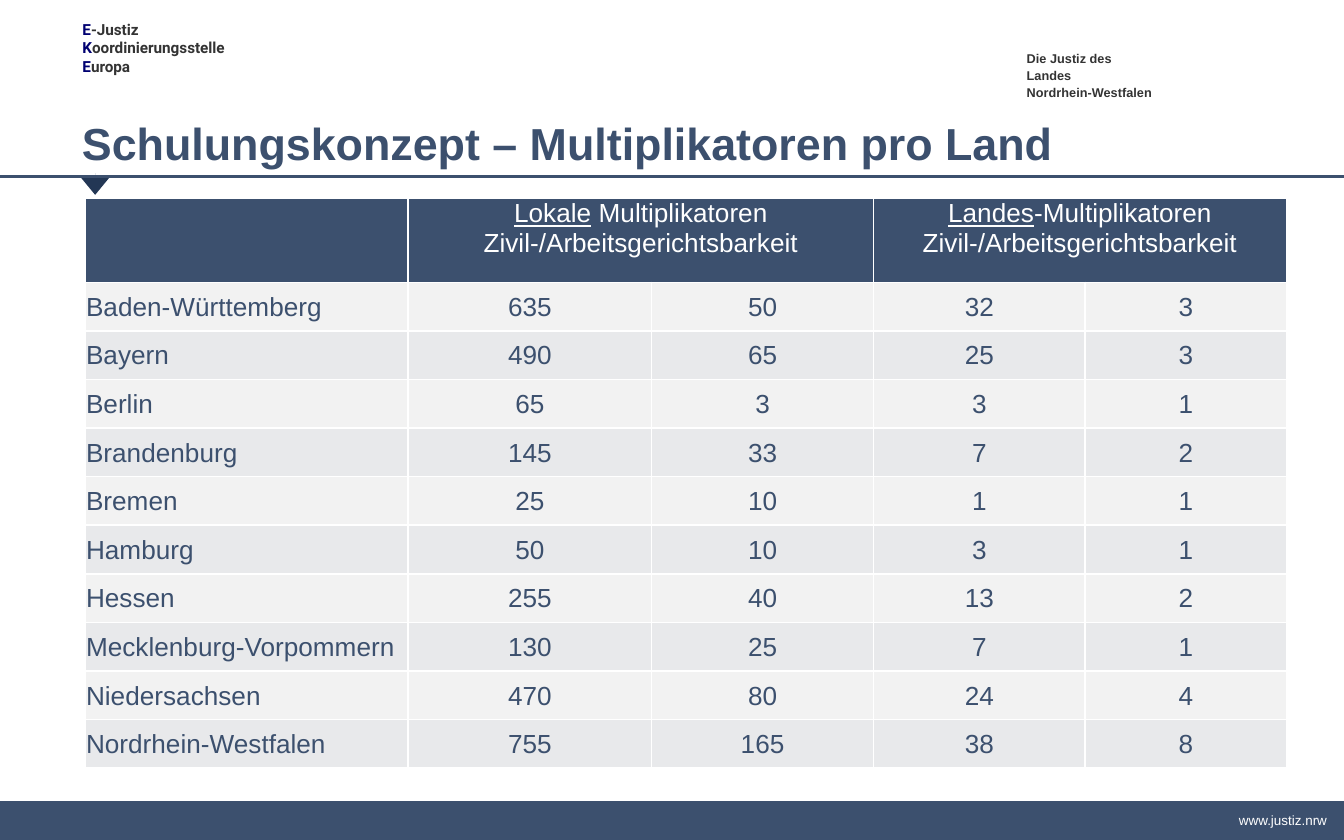
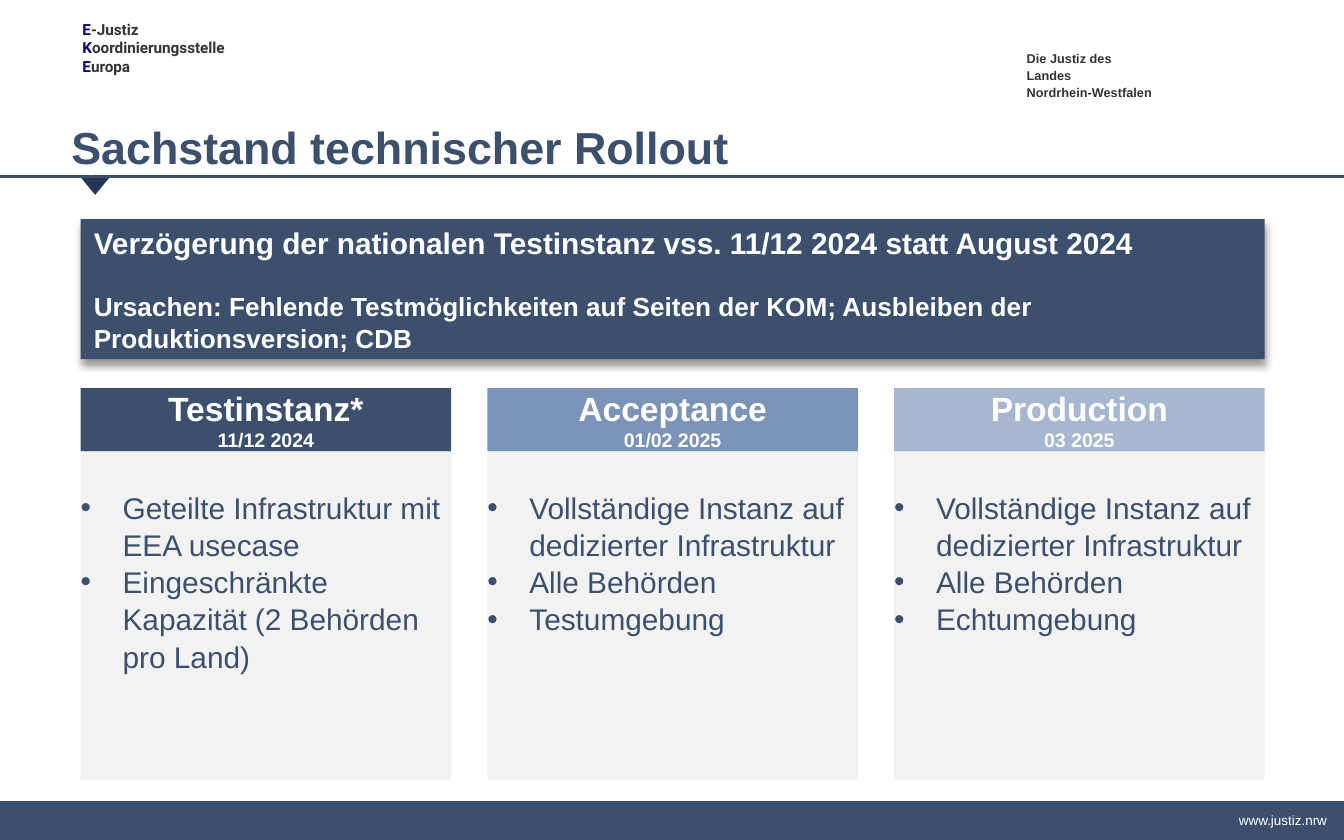
from dataclasses import dataclass
from typing import Any

from lxml import etree
from pptx import Presentation
from pptx import util as u
from pptx.dml.color import RGBColor
from pptx.enum import shapes, text
from pptx.oxml import ns

Pt = u.Pt

NAVY = RGBColor(0x3C, 0x50, 0x6E)
DARK_NAVY = RGBColor(0x23, 0x37, 0x55)
MID_BLUE = RGBColor(0x7B, 0x93, 0xB7)
LIGHT_BLUE = RGBColor(0xA7, 0xB7, 0xCF)
INITIAL_BLUE = RGBColor(0x00, 0x00, 0x71)
CHARCOAL = RGBColor(0x33, 0x33, 0x33)
PALE = RGBColor(0xF2, 0xF2, 0xF2)
PALE_BLUE = RGBColor(0xE8, 0xE9, 0xEB)
WHITE = RGBColor(0xFF, 0xFF, 0xFF)

SLIDE_WIDTH, SLIDE_HEIGHT = 720, 450
LEFT, CENTER, RIGHT = text.PP_ALIGN.LEFT, text.PP_ALIGN.CENTER, text.PP_ALIGN.RIGHT
TOP, MIDDLE, BOTTOM = (text.MSO_ANCHOR.TOP, text.MSO_ANCHOR.MIDDLE,
                       text.MSO_ANCHOR.BOTTOM)
GROW = text.MSO_AUTO_SIZE.SHAPE_TO_FIT_TEXT
RECTANGLE = shapes.MSO_SHAPE.RECTANGLE
NO_MARGINS = {f"margin_{side}": 0 for side in ("left", "top", "right", "bottom")}
CELL_MARGINS = NO_MARGINS | {f"margin_{side}": Pt(0.7)
                             for side in ("left", "top", "right")}


@dataclass(frozen=True)
class Area:
    """A rectangle in points."""
    left: float
    top: float
    width: float
    height: float

    def lengths(self) -> tuple:
        return Pt(self.left), Pt(self.top), Pt(self.width), Pt(self.height)


@dataclass(frozen=True)
class Span:
    words: str
    size: float
    color: RGBColor = WHITE
    bold: bool = False
    underline: bool = False
    font: str = "Arial"


@dataclass(frozen=True)
class Para:
    spans: tuple[Span, ...]
    align: Any = LEFT
    line: Any = None
    before: float = 0
    bullet: bool = False


@dataclass(frozen=True)
class Stage:
    name: str
    date: str
    color: RGBColor
    points: tuple[str, ...]


STATES = (
    ("Baden-Württemberg", 635, 50, 32, 3),
    ("Bayern", 490, 65, 25, 3),
    ("Berlin", 65, 3, 3, 1),
    ("Brandenburg", 145, 33, 7, 2),
    ("Bremen", 25, 10, 1, 1),
    ("Hamburg", 50, 10, 3, 1),
    ("Hessen", 255, 40, 13, 2),
    ("Mecklenburg-Vorpommern", 130, 25, 7, 1),
    ("Niedersachsen", 470, 80, 24, 4),
    ("Nordrhein-Westfalen", 755, 165, 38, 8),
)
COLUMN_WIDTHS = (173.3, 130.4, 118.9, 113.4, 107.8)
HEADER_HEIGHT, ROW_HEIGHT = 45.3, 26.05

STAGES = (
    Stage("Testinstanz*", "11/12 2024", NAVY,
          ("Geteilte Infrastruktur mit EEA usecase",
           "Eingeschränkte Kapazität (2 Behörden pro Land)")),
    Stage("Acceptance", "01/02 2025", MID_BLUE,
          ("Vollständige Instanz auf dedizierter Infrastruktur",
           "Alle Behörden", "Testumgebung")),
    Stage("Production", "03 2025", LIGHT_BLUE,
          ("Vollständige Instanz auf dedizierter Infrastruktur",
           "Alle Behörden", "Echtumgebung")),
)


def apply(target: Any, formats: dict[str, Any]) -> None:
    for name, value in formats.items():
        setattr(target, name, value)


def add_xml(parent: Any, tag: str, **attributes: str) -> Any:
    return etree.SubElement(parent, ns.qn(tag), attributes)


def add_span(para: Any, span: Span) -> None:
    for number, line in enumerate(span.words.split("\n")):
        if number:
            para.add_line_break()
        run = para.add_run()
        run.text = line
        apply(run.font, {"name": span.font, "size": Pt(span.size),
                         "bold": span.bold, "underline": span.underline})
        run.font.color.rgb = span.color


def write(frame: Any, paras: list[Para]) -> None:
    for number, item in enumerate(paras):
        para = frame.add_paragraph() if number else frame.paragraphs[0]
        if item.bullet:
            properties = para._p.get_or_add_pPr()
            apply_indent = {"marL": str(Pt(22.5)), "indent": str(-Pt(22.5))}
            for name, value in apply_indent.items():
                properties.set(name, value)
            add_xml(properties, "a:buFont", typeface="Arial")
            add_xml(properties, "a:buChar", char="•")
        apply(para, {"alignment": item.align, "line_spacing": item.line,
                     "space_before": Pt(item.before)})
        for span in item.spans:
            add_span(para, span)


def add_text(page: Any, area: Area, paras: list[Para], **formats: Any) -> None:
    frame = page.shapes.add_textbox(*area.lengths()).text_frame
    apply(frame, {"word_wrap": True} | formats)
    write(frame, paras)


def add_block(page: Any, area: Area, color: RGBColor, paras: list[Para] = (),
              kind: Any = RECTANGLE, **formats: Any) -> Any:
    """Add a flat filled shape without outline."""
    block = page.shapes.add_shape(kind, *area.lengths())
    block.shadow.inherit = False
    block.fill.solid()
    block.fill.fore_color.rgb = color
    block.line.fill.background()
    apply(block.text_frame, {"word_wrap": True, "vertical_anchor": MIDDLE} | formats)
    write(block.text_frame, paras)
    return block


def add_drop_shadow(block: Any) -> None:
    effects = block._element.spPr.find(ns.qn("a:effectLst"))
    shadow = add_xml(effects, "a:outerShdw", blurRad=str(Pt(4)), dist=str(Pt(3)),
                     dir="5400000", algn="t", rotWithShape="0")
    color = add_xml(shadow, "a:srgbClr", val="000000")
    add_xml(color, "a:alpha", val="40000")


def add_page(deck: Any, title: str, area: Area, line: Any) -> Any:
    """Add a slide with the shared header, title rule, footer and its title."""
    page = deck.slides.add_slide(deck.slide_layouts[6])
    page.background.fill.solid()
    page.background.fill.fore_color.rgb = WHITE

    add_text(page, Area(550, 26.6, 71.3, 18),
             [Para((Span("Die Justiz des Landes\nNordrhein-Westfalen", 6.8,
                         CHARCOAL, bold=True),), line=Pt(9))],
             **NO_MARGINS | {"word_wrap": False, "auto_size": GROW})
    add_block(page, Area(0, 429.1, SLIDE_WIDTH, SLIDE_HEIGHT - 429.1), NAVY)
    add_text(page, Area(644.4, 431.5, 73.6, 15.8),
             [Para((Span("www.justiz.nrw", 7.2),), RIGHT)],
             vertical_anchor=MIDDLE, auto_size=GROW)

    marker = add_block(page, Area(42.5, 92.8, 17, 11.6), DARK_NAVY,
                       kind=shapes.MSO_SHAPE.DOWN_ARROW)
    marker.adjustments[0], marker.adjustments[1] = 0, 0.89
    rule = page.shapes.add_connector(shapes.MSO_CONNECTOR.STRAIGHT, 0, Pt(94.5),
                                     Pt(SLIDE_WIDTH), Pt(94.5))
    rule.line.color.rgb = NAVY
    rule.line.width = Pt(1.5)
    add_xml(rule._element.spPr, "a:effectLst")

    unit = [Para((Span(word[0], 8.2, INITIAL_BLUE, bold=True, font="Roboto"),
                  Span(word[1:], 8.2, CHARCOAL, bold=True, font="Roboto")))
            for word in ("E-Justiz", "Koordinierungsstelle", "Europa")]
    add_text(page, Area(37.1, 7.2, 134.6, 37.2), unit, auto_size=GROW)
    add_text(page, area, [Para((Span(title, 24, NAVY, bold=True),), line=line)],
             vertical_anchor=BOTTOM, **NO_MARGINS)
    return page


def fill_cell(cell: Any, color: RGBColor, paras: list[Para], anchor: Any) -> None:
    properties = cell._tc.get_or_add_tcPr()
    for edge in ("a:lnL", "a:lnR", "a:lnT", "a:lnB"):
        border = add_xml(properties, edge, w=str(Pt(1)))
        add_xml(add_xml(border, "a:solidFill"), "a:srgbClr", val=str(WHITE))
    cell.fill.solid()
    cell.fill.fore_color.rgb = color
    apply(cell, CELL_MARGINS | {"vertical_anchor": anchor})
    write(cell.text_frame, paras)


def add_state_table(page: Any) -> None:
    area = Area(45.4, 106, sum(COLUMN_WIDTHS), HEADER_HEIGHT + ROW_HEIGHT * len(STATES))
    table = page.shapes.add_table(len(STATES) + 1, len(COLUMN_WIDTHS),
                                  *area.lengths()).table
    apply(table, {"first_row": False, "horz_banding": False})
    for column, width in zip(table.columns, COLUMN_WIDTHS):
        column.width = Pt(width)
    for number, row in enumerate(table.rows):
        row.height = Pt(ROW_HEIGHT if number else HEADER_HEIGHT)

    headings = {1: ("Lokale", " Multiplikatoren"), 3: ("Landes", "-Multiplikatoren")}
    for column in range(len(COLUMN_WIDTHS)):
        paras = []
        if column in headings:
            table.cell(0, column).merge(table.cell(0, column + 1))
            marked, rest = headings[column]
            paras = [Para((Span(marked, 14, underline=True), Span(rest, 14)), CENTER),
                     Para((Span("Zivil-/Arbeitsgerichtsbarkeit", 14),), CENTER)]
        fill_cell(table.cell(0, column), NAVY, paras, TOP)

    for row, state in enumerate(STATES, 1):
        for column, value in enumerate(state):
            para = Para((Span(str(value), 14, NAVY),), CENTER if column else LEFT)
            fill_cell(table.cell(row, column), PALE if row % 2 else PALE_BLUE,
                      [para], MIDDLE)


def add_stage(page: Any, stage: Stage, left: float) -> None:
    width, head_height = 198.5, 33.9
    add_block(page, Area(left, 208, width, head_height), stage.color,
              [Para((Span(stage.name, 18, bold=True),), CENTER),
               Para((Span(stage.date, 10.5, bold=True),), CENTER)], **NO_MARGINS)
    points = [Para((Span(point, 16, NAVY),), line=1.04, bullet=True)
              for point in stage.points]
    add_block(page, Area(left, 208 + head_height, width, 175.8), PALE, points,
              **NO_MARGINS | {"margin_top": Pt(19.5), "vertical_anchor": TOP})


def add_rollout(page: Any) -> None:
    banner = add_block(page, Area(43.2, 117.4, 634.4, 75), NAVY, [
        Para((Span("Verzögerung der nationalen Testinstanz vss. 11/12 2024 "
                   "statt August 2024", 16, bold=True),)),
        Para((Span("Ursachen: Fehlende Testmöglichkeiten auf Seiten der KOM; "
                   "Ausbleiben der Produktionsversion; CDB", 14, bold=True),),
             before=16.2),
    ])
    add_drop_shadow(banner)
    for number, stage in enumerate(STAGES):
        add_stage(page, stage, 43.2 + 217.9 * number)


def main() -> None:
    deck = Presentation()
    apply(deck, {"slide_width": Pt(SLIDE_WIDTH), "slide_height": Pt(SLIDE_HEIGHT)})
    add_state_table(add_page(deck, "Schulungskonzept – Multiplikatoren pro Land",
                             Area(43.9, 54.7, 586.8, 36), Pt(12)))
    add_rollout(add_page(deck, "Sachstand technischer Rollout",
                         Area(38.2, 56.9, 586.8, 36), 1.14))
    deck.save("out.pptx")


if __name__ == "__main__":
    main()
